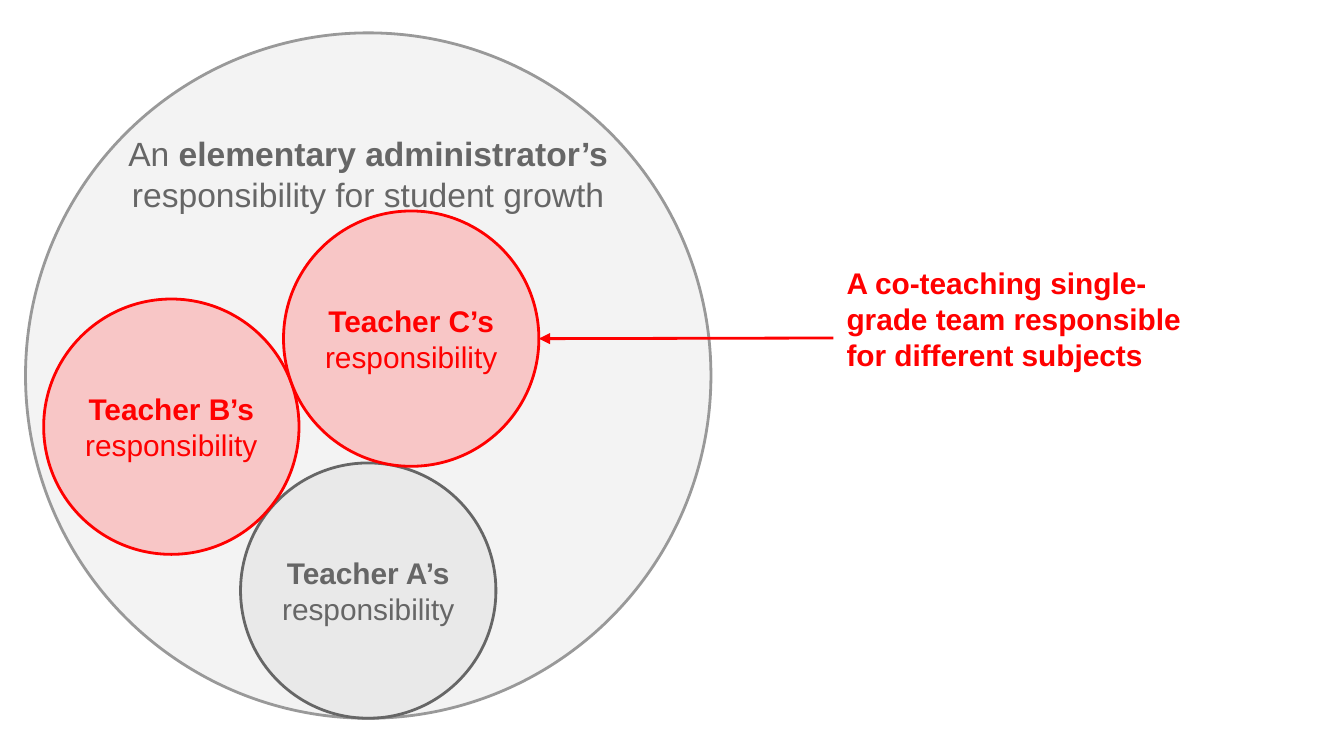
from dataclasses import dataclass
from lxml.etree import SubElement as Sub
from pptx import Presentation
from pptx.dml.color import RGBColor as RGB
from pptx.enum.shapes import MSO_CONNECTOR as Link, MSO_SHAPE as Kind
from pptx.enum.text import MSO_ANCHOR as Anchor, PP_ALIGN as Align
from pptx.oxml.ns import qn
from pptx.shapes.autoshape import Shape
from pptx.shapes.shapetree import GroupShapes, SlideShapes
from pptx.text.text import TextFrame
from pptx.util import Pt

PX = 4572  # EMU; 200 px to the inch
SIDES = ("left", "top", "right", "bottom")


@dataclass(frozen=True)
class Theme:
    font: str = "Arial"
    large: int = 18
    body: int = 16
    stroke: float = 1.5
    gray: str = "666666"
    rim: str = "999999"
    pale: str = "F3F3F3"
    red: str = "FF0000"
    pink: str = "FBB6B6"


@dataclass(frozen=True)
class Run:
    text: str
    bold: bool = False


@dataclass(frozen=True)
class Circle:
    left: int
    top: int
    size: int
    fill: str
    alpha: int
    line: str
    color: str
    points: int
    anchor: Anchor
    lines: tuple[tuple[Run, ...], ...]


THEME = Theme()


def teacher(name: str, left: int, top: int, fill: str, alpha: int,
            color: str) -> Circle:
    lines = ((Run(f"Teacher {name}’s", True),), (Run("responsibility"),))
    return Circle(left, top, 380, fill, alpha, color, color, THEME.body,
                  Anchor.MIDDLE, lines)


ADMIN = Circle(
    38, 49, 1020, THEME.pale, 100, THEME.rim, THEME.gray, THEME.large,
    Anchor.TOP,
    ((Run("An "), Run("elementary administrator’s", True)),
     (Run("responsibility for student growth"),)))
SOLO = teacher("A", 358, 689, THEME.gray, 7, THEME.gray)
TEAM = (teacher("B", 65, 445, THEME.pink, 73, THEME.red),
        teacher("C", 422, 314, THEME.pink, 73, THEME.red))


def write(frame: TextFrame, lines: tuple[tuple[Run, ...], ...], color: str,
          points: int, align: Align, anchor: Anchor, inset: int) -> None:
    form = {"word_wrap": True, "vertical_anchor": anchor}
    form |= {f"margin_{side}": inset * PX for side in SIDES}
    for key, value in form.items():
        setattr(frame, key, value)
    for num, line in enumerate(lines):
        para = frame.add_paragraph() if num else frame.paragraphs[0]
        para.alignment = align
        for part in line:
            run = para.add_run()
            run.text = part.text
            style = {"name": THEME.font, "size": Pt(points),
                     "bold": part.bold}
            for key, value in style.items():
                setattr(run.font, key, value)
            run.font.color.rgb = RGB.from_string(color)


def draw(shapes: SlideShapes | GroupShapes, item: Circle) -> None:
    size = item.size * PX
    oval = shapes.add_shape(Kind.OVAL, item.left * PX, item.top * PX,
                            size, size)
    oval.shadow.inherit = False
    oval.fill.solid()
    oval.fill.fore_color.rgb = RGB.from_string(item.fill)
    if item.alpha < 100:
        tint = oval.fill._xPr.find(f".//{qn('a:srgbClr')}")
        Sub(tint, qn("a:alpha"), val=str(item.alpha * 1000))
    oval.line.color.rgb = RGB.from_string(item.line)
    oval.line.width = Pt(THEME.stroke)
    write(oval.text_frame, item.lines, item.color, item.points,
          Align.CENTER, item.anchor, 0)


def point(shapes: SlideShapes, note: Shape, goal: Circle) -> None:
    """Draw an arrow from the note to the right edge of the goal circle."""
    right = (goal.left + goal.size) * PX
    mid = (goal.top + goal.size // 2) * PX
    arrow = shapes.add_connector(Link.STRAIGHT, right, mid, note.left, mid)
    arrow.end_connect(note, 1)
    arrow.line.color.rgb = RGB.from_string(THEME.red)
    arrow.line.width = Pt(THEME.stroke)
    Sub(arrow.line._get_or_add_ln(), qn("a:headEnd"), type="triangle")
    Sub(arrow._element.spPr, qn("a:effectLst"))


def main() -> None:
    deck = Presentation()
    deck.slide_width, deck.slide_height = 2000 * PX, 1125 * PX
    shapes = deck.slides.add_slide(deck.slide_layouts[6]).shapes

    draw(shapes, ADMIN)
    draw(shapes, SOLO)
    note = shapes.add_textbox(1240 * PX, 374 * PX, 598 * PX, 258 * PX)
    text = ("A co-teaching single-grade team responsible "
            "for different subjects")
    write(note.text_frame, ((Run(text, True),),), THEME.red, THEME.body,
          Align.LEFT, Anchor.TOP, 20)
    point(shapes, note, TEAM[-1])
    group = shapes.add_group_shape()
    for item in TEAM:
        draw(group.shapes, item)
    deck.save("out.pptx")


if __name__ == "__main__":
    main()
